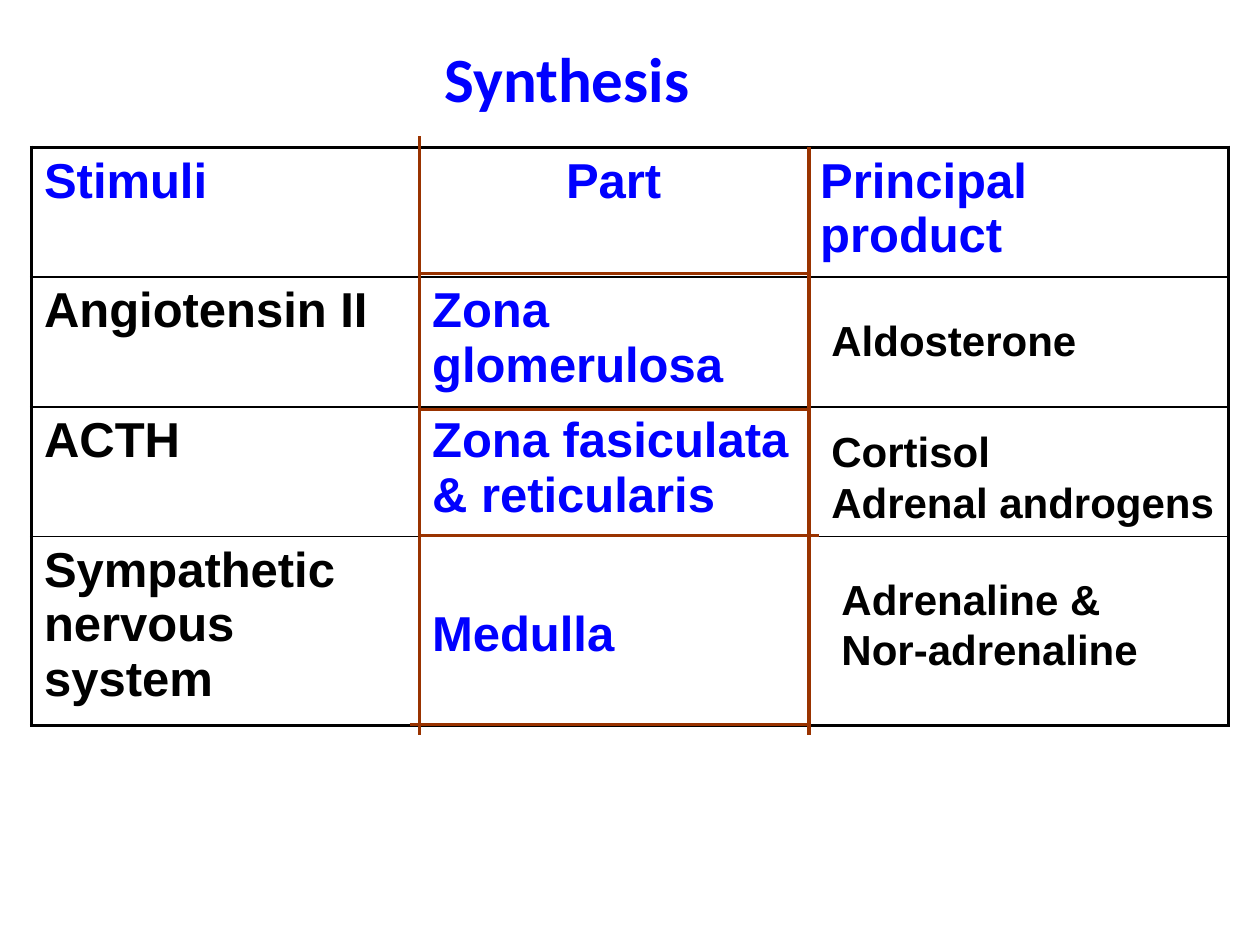
"""Build the slide on adrenal hormone synthesis."""
from dataclasses import dataclass

from lxml.etree import SubElement
from pptx import Presentation
from pptx.dml.color import RGBColor
from pptx.enum.shapes import MSO_CONNECTOR
from pptx.enum.text import MSO_ANCHOR, PP_ALIGN
from pptx.oxml import parse_xml
from pptx.oxml.ns import nsdecls, qn
from pptx.slide import Slide
from pptx.table import _Cell
from pptx.text.text import TextFrame
from pptx.util import Inches, Pt


@dataclass(frozen=True)
class Theme:
    """Colours, fonts and sizes of the slide."""
    blue: str = "0000FF"
    black: str = "000000"
    brown: str = "993300"
    title_font: str = "Calibri"
    body_font: str = "Arial"
    title_size: int = 36
    table_size: int = 28
    product_size: int = 24
    rule_width: float = 2
    outer_border: float = 2.25
    inner_border: float = 1


@dataclass(frozen=True)
class Rule:
    """A straight brown line, in inches."""
    x1: float
    y1: float
    x2: float
    y2: float


@dataclass(frozen=True)
class Product:
    """A product label laid over the last column, in inches."""
    left: float
    top: float
    width: float
    height: float
    text: str
    wrap: bool = False


THEME = Theme()
COLUMNS = (3.08, 3.08, 3.34)
ROWS = (1.03, 1.03, 1.03, 1.5)
TABLE = (
    ("Stimuli", "Part", "Principal product"),
    ("Angiotensin II", "Zona glomerulosa", ""),
    ("ACTH", "Zona fasiculata & reticularis", ""),
    ("Sympathetic nervous system", "Medulla", ""),
)
RULES = (
    Rule(3.33, 2.17, 6.42, 2.17),
    Rule(3.33, 1.08, 3.33, 5.83),
    Rule(3.25, 5.75, 6.42, 5.75),
    Rule(6.42, 1.17, 6.42, 5.83),
    Rule(3.33, 4.25, 6.5, 4.25),
    Rule(3.33, 3.25, 6.42, 3.25),
)
PRODUCTS = (
    Product(6.5, 2.45, 2.72, 0.5, "Aldosterone", True),
    Product(6.5, 3.33, 3.24, 0.9, "Cortisol\nAdrenal androgens"),
    Product(6.58, 4.5, 2.55, 0.9, "Adrenaline &\nNor-adrenaline"),
)


def write(frame: TextFrame, text: str, font: str, size: int, colour: str,
          align: PP_ALIGN = PP_ALIGN.LEFT) -> None:
    """Fill a text frame with bold paragraphs, one per line."""
    frame.text = text
    for para in frame.paragraphs:
        para.alignment = align
        for span in para.runs:
            for name, value in {"name": font, "size": Pt(size), "bold": True}.items():
                setattr(span.font, name, value)
            span.font.color.rgb = RGBColor.from_string(colour)


def draw_title(slide: Slide) -> None:
    """Place and format the title."""
    title = slide.shapes.title
    place = {"left": 0, "top": 0.25, "width": 9, "height": 0.72}
    for name, value in place.items():
        setattr(title, name, Inches(value))
    title.text_frame.vertical_anchor = MSO_ANCHOR.MIDDLE
    write(title.text_frame, "Synthesis", THEME.title_font, THEME.title_size,
          THEME.blue, PP_ALIGN.CENTER)


def set_borders(cell: _Cell, outer: dict[str, bool]) -> None:
    """Draw the four borders, thicker where they lie on the outside."""
    properties = cell._tc.get_or_add_tcPr()
    for index, (side, outside) in enumerate(outer.items()):
        width = Pt(THEME.outer_border if outside else THEME.inner_border)
        properties.insert(index, parse_xml(
            f'<a:{side} {nsdecls("a")} w="{width}"><a:solidFill>'
            f'<a:srgbClr val="{THEME.black}"/></a:solidFill></a:{side}>'))


def draw_table(slide: Slide) -> None:
    """Draw the table of stimuli, parts and products."""
    table = slide.shapes.add_table(
        len(ROWS), len(COLUMNS), Inches(0.25), Inches(1.17),
        Inches(sum(COLUMNS)), Inches(sum(ROWS))).table
    table.first_row = table.horz_banding = False
    for column, width in zip(table.columns, COLUMNS):
        column.width = Inches(width)
    for row, height in zip(table.rows, ROWS):
        row.height = Inches(height)
    last_row, last_column = len(ROWS) - 1, len(COLUMNS) - 1
    for r, texts in enumerate(TABLE):
        for c, text in enumerate(texts):
            cell = table.cell(r, c)
            cell.fill.background()
            set_borders(cell, {"lnL": c == 0, "lnR": c == last_column,
                               "lnT": r == 0, "lnB": r == last_row})
            colour = THEME.blue if r == 0 or c == 1 else THEME.black
            align = PP_ALIGN.CENTER if (r, c) == (0, 1) else PP_ALIGN.LEFT
            write(cell.text_frame, text, THEME.body_font, THEME.table_size, colour, align)
    medulla = table.cell(last_row, 1)
    medulla.vertical_anchor = MSO_ANCHOR.MIDDLE
    medulla.margin_top = Inches(0.1)


def draw_rule(slide: Slide, rule: Rule) -> None:
    """Draw one brown line."""
    line = slide.shapes.add_connector(
        MSO_CONNECTOR.STRAIGHT, Inches(rule.x1), Inches(rule.y1),
        Inches(rule.x2), Inches(rule.y2))
    line.line.color.rgb = RGBColor.from_string(THEME.brown)
    line.line.width = Pt(THEME.rule_width)
    SubElement(line._element.spPr, qn("a:effectLst"))


def draw_product(slide: Slide, product: Product) -> None:
    """Draw one product label."""
    box = slide.shapes.add_textbox(
        Inches(product.left), Inches(product.top),
        Inches(product.width), Inches(product.height))
    box.text_frame.word_wrap = product.wrap
    write(box.text_frame, product.text, THEME.body_font, THEME.product_size, THEME.black)


def main() -> None:
    """Build and save the deck."""
    deck = Presentation()
    deck.slide_width, deck.slide_height = Inches(10), Inches(7.5)
    page = deck.slides.add_slide(deck.slide_layouts.get_by_name("Title Only"))
    draw_table(page)
    draw_title(page)
    for rule in RULES:
        draw_rule(page, rule)
    for product in PRODUCTS:
        draw_product(page, product)
    deck.save("out.pptx")


if __name__ == "__main__":
    main()
